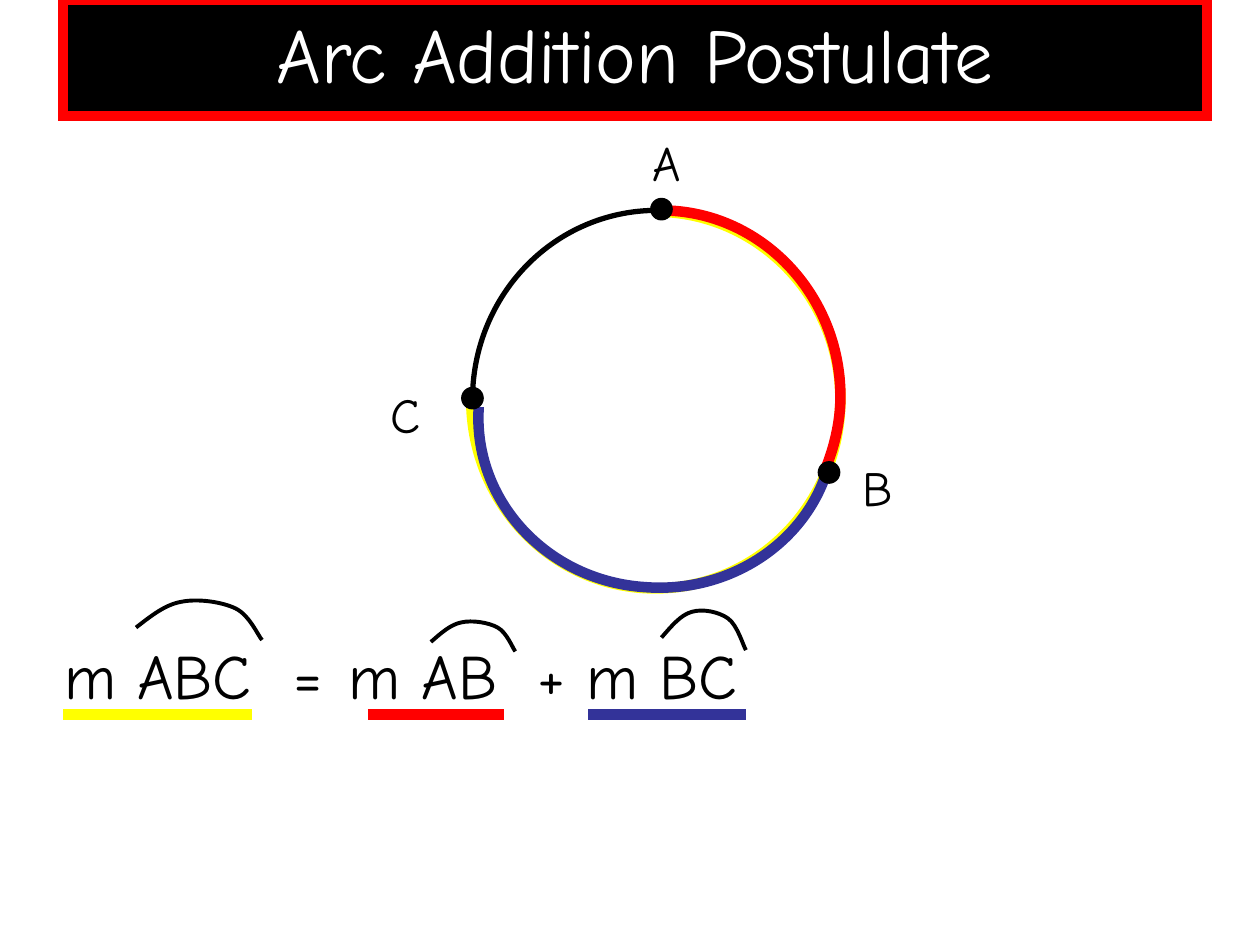
from lxml.etree import SubElement
from pptx import Presentation
from pptx.dml.color import RGBColor
from pptx.enum.shapes import MSO_CONNECTOR as LINE, MSO_SHAPE as SHAPE
from pptx.enum.text import MSO_ANCHOR as ANCHOR, PP_ALIGN as ALIGN
from pptx.oxml.ns import qn
from pptx.util import Inches, Pt

FONT = "Comic Neue"
BLACK = RGBColor(0, 0, 0)
WHITE = RGBColor(255, 255, 255)
RED = RGBColor(255, 0, 0)
YELLOW = RGBColor(255, 255, 0)
BLUE = RGBColor(0x33, 0x33, 0x99)

TITLE = "Arc Addition Postulate"
# colour, then the start and three Bezier points for each curve
ARCS = [
    (YELLOW, [(5.2, 1.68),
              (6.01, 1.68), (6.67, 2.35), (6.67, 3.17),
              (6.67, 4), (6.01, 4.67), (5.2, 4.67),
              (4.39, 4.67), (3.74, 4), (3.74, 3.17)]),
    (RED, [(5.25, 1.67),
           (6.03, 1.67), (6.67, 2.33), (6.67, 3.15),
           (6.67, 3.35), (6.62, 3.56), (6.54, 3.75)]),
    (BLUE, [(6.56, 3.75),
            (6.37, 4.33), (5.77, 4.71), (5.12, 4.66),
            (4.34, 4.61), (3.75, 3.97), (3.8, 3.23)]),
]
DOTS = [(6.58, 3.75), (5.25, 1.66), (3.75, 3.16)]
LABELS = [("A", 5.08, 1), ("B", 6.75, 3.58), ("C", 3, 3)]
# text, its left and width, hat box, underline from and to, colour
TERMS = [
    ("m ABC  =", 0.41, 2.42, (1.08, 4.75, 1, 0.33), 0.5, 2, YELLOW),
    ("m AB", 2.67, 1.67, (3.42, 4.92, 0.67, 0.25), 2.92, 4, RED),
    ("+ m BC", 4.17, 2, (5.25, 4.83, 0.67, 0.33), 4.67, 5.92, BLUE),
]
# Bezier points of an arc hat in a unit box
HAT = [
    (0, 0.7),
    (0.12, 0.42), (0.23, 0.15), (0.36, 0.08),
    (0.49, 0), (0.68, 0.08), (0.79, 0.24),
    (0.9, 0.4), (0.97, 0.9), (1, 1),
]
DOT = 0.17
BASE = 5.67


def write(frame, text, size, color, align=ALIGN.LEFT):
    frame.word_wrap = True
    para = frame.paragraphs[0]
    para.alignment = align
    run = para.add_run()
    run.text = text
    font = run.font
    font.name, font.size, font.color.rgb = FONT, Pt(size), color


def stroke(item, color, width):
    item.line.color.rgb = color
    item.line.width = Pt(width)


def label(shapes, text, left, top, width, height, size):
    box = shapes.add_textbox(*map(Inches, (left, top, width, height)))
    write(box.text_frame, text, size, BLACK)


def oval(shapes, left, top, width, height, weight):
    item = shapes.add_shape(SHAPE.OVAL, *map(Inches, (left, top, width, height)))
    item.shadow.inherit = False
    item.fill.background()
    stroke(item, BLACK, weight)
    return item


def curve(shapes, points, color, width):
    """Draw an open line, turning each three segments into one Bezier curve."""
    spots = [(Inches(x), Inches(y)) for x, y in points]
    pen = shapes.build_freeform(*spots[0])
    pen.add_line_segments(spots[1:], close=False)
    item = pen.convert_to_shape()
    item.shadow.inherit = False
    item.fill.background()
    stroke(item, color, width)
    track = next(item._element.iter(qn("a:path")))
    legs = track.findall(qn("a:lnTo"))
    for i in range(0, len(legs), 3):
        bend = SubElement(track, qn("a:cubicBezTo"))
        for leg in legs[i:i + 3]:
            bend.append(leg[0])
            track.remove(leg)


def term(shapes, text, left, width, hat, start, end, color):
    group = shapes.add_group_shape().shapes
    label(group, text, left, 5, width, 0.7, 36)
    x, y, w, h = hat
    curve(group, [(x + w * u, y + h * v) for u, v in HAT], BLACK, 2.25)
    rule = group.add_connector(
        LINE.STRAIGHT, *map(Inches, (start, BASE, end, BASE)))
    stroke(rule, color, 6)
    SubElement(rule._element.spPr, qn("a:effectLst"))


def main():
    deck = Presentation()
    deck.slide_width, deck.slide_height = Inches(10), Inches(7.5)
    slide = deck.slides.add_slide(deck.slide_layouts[5])
    shapes = slide.shapes

    title = shapes.title
    title.left, title.top = Inches(0.5), Inches(0)
    title.width, title.height = Inches(9.08), Inches(0.92)
    title.fill.solid()
    title.fill.fore_color.rgb = BLACK
    stroke(title, RED, 6)
    edge = title._element.spPr.find(qn("a:ln"))
    SubElement(edge, qn("a:miter"), lim="800000")
    title.text_frame.vertical_anchor = ANCHOR.TOP
    write(title.text_frame, TITLE, 44, WHITE, ALIGN.CENTER)

    oval(shapes, 3.75, 1.67, 2.92, 3, 3)
    for color, points in ARCS:
        curve(shapes, points, color, 6)
    for x, y in DOTS:
        dot = oval(shapes, x - DOT / 2, y - DOT / 2, DOT, DOT, 0.75)
        dot.fill.solid()
        dot.fill.fore_color.rgb = BLACK
    for text, left, top in LABELS:
        label(shapes, text, left, top, 0.67, 0.57, 28)
    for parts in TERMS:
        term(shapes, *parts)

    deck.save("out.pptx")


if __name__ == "__main__":
    main()
